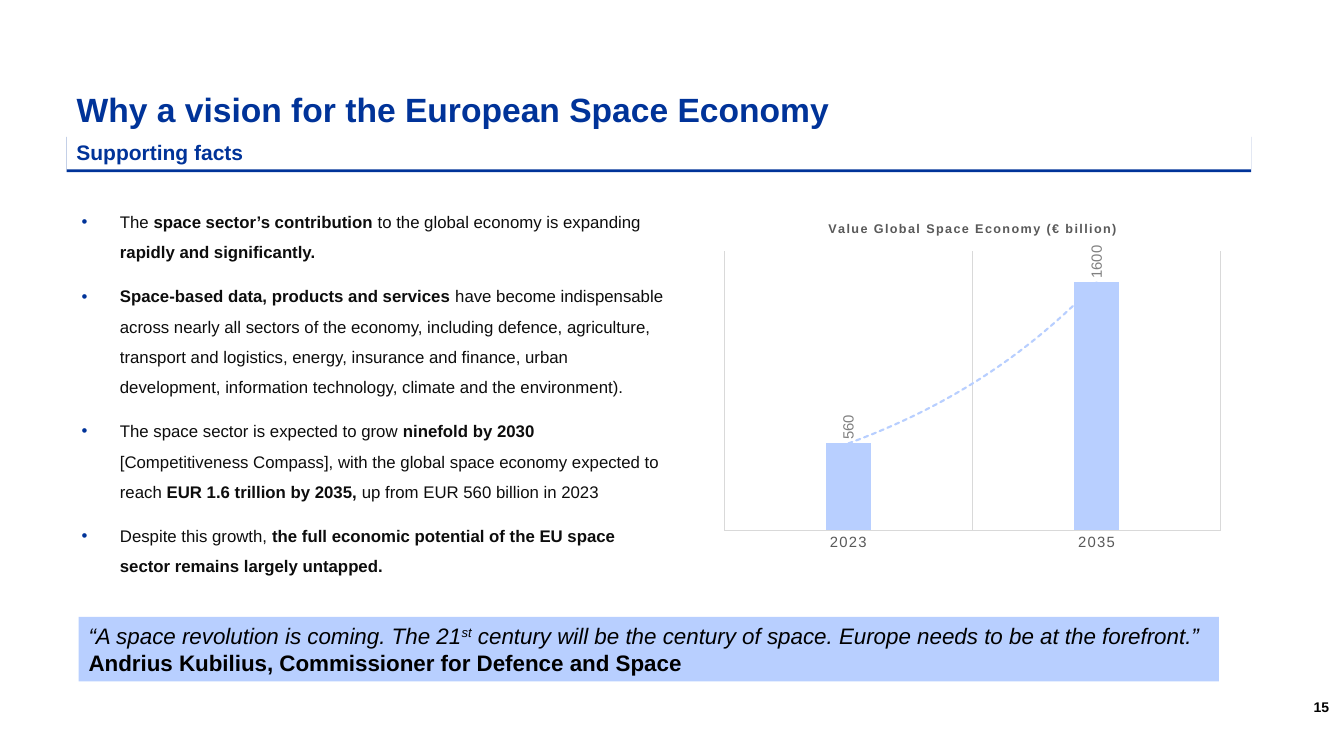
"""Build the slide on the vision for the European Space Economy."""
from lxml import etree
from pptx import Presentation
from pptx.chart.data import CategoryChartData
from pptx.dml.color import RGBColor
from pptx.enum.chart import XL_CHART_TYPE, XL_LABEL_POSITION, XL_TICK_MARK
from pptx.enum.shapes import MSO_SHAPE
from pptx.enum.text import MSO_ANCHOR, PP_ALIGN
from pptx.oxml import parse_xml
from pptx.oxml.ns import nsdecls, qn
from pptx.util import Inches, Pt

COLUMNS = XL_CHART_TYPE.COLUMN_CLUSTERED
OUTSIDE_END = XL_LABEL_POSITION.OUTSIDE_END
NO_TICKS = XL_TICK_MARK.NONE
RECTANGLE = MSO_SHAPE.RECTANGLE
TOP, MIDDLE, BOTTOM = MSO_ANCHOR.TOP, MSO_ANCHOR.MIDDLE, MSO_ANCHOR.BOTTOM
LEFT, JUSTIFY = PP_ALIGN.LEFT, PP_ALIGN.JUSTIFY

FONT = "Arial"
COLORS = {"navy": "003399", "pale": "B8CFFF", "body": "0D0D0D", "black": "000000",
          "white": "FFFFFF", "axis": "595959", "grid": "D9D9D9", "label": "808080"}

TITLE = "Why a vision for the European Space Economy"
HEADING = "Supporting facts"
PAGE_NUMBER = "15"
FACTS = [
    [("The ", ""), ("space sector’s contribution ", "b"),
     ("to the global economy is expanding ", ""), ("rapidly and significantly.", "b")],
    [("Space-based data, products and services ", "b"),
     ("have become indispensable across nearly all sectors of the economy, including "
      "defence, agriculture, transport and logistics, energy, insurance and finance, urban "
      "development, information technology, climate and the environment).", "")],
    [("The space sector is expected to grow ", ""), ("ninefold by 2030 ", "b"),
     ("[Competitiveness Compass], with the global space economy expected to reach ", ""),
     ("EUR 1.6 trillion by 2035, ", "b"), ("up from EUR 560 billion in 2023", "")],
    [("Despite this growth, ", ""),
     ("the full economic potential of the EU space sector remains largely untapped.", "b")],
]
QUOTE = [
    [("“A space revolution is coming. The 21", "i"), ("st", "i^"),
     (" century will be the century of space. Europe needs to be at the forefront.”", "i")],
    [("Andrius Kubilius, Commissioner for Defence and Space", "b")],
]
CHART_TITLE = "Value Global Space Economy (€ billion)"
SPACE_ECONOMY = {"2023": 560, "2035": 1600}
AXIS_MAX = 1800


def rgb(name):
    return RGBColor.from_string(COLORS[name])


def style_font(font, size, color, bold=False, italic=False):
    font.name, font.size, font.bold, font.italic = FONT, Pt(size), bold, italic
    font.color.rgb = rgb(color)


def add_runs(paragraph, runs, size, color):
    for text, style in runs:
        run = paragraph.add_run()
        run.text = text
        style_font(run.font, size, color, "b" in style, "i" in style)
        if "^" in style:
            run.font._element.set("baseline", "30000")


def fill_frame(frame, paragraphs, size, color, anchor=TOP, align=LEFT):
    frame.word_wrap = True
    frame.vertical_anchor = anchor
    for number, runs in enumerate(paragraphs):
        paragraph = frame.add_paragraph() if number else frame.paragraphs[0]
        paragraph.alignment = align
        add_runs(paragraph, runs, size, color)


def add_band(slide, box, fill):
    band = slide.shapes.add_shape(RECTANGLE, *map(Inches, box))
    band.shadow.inherit = False
    band.fill.solid()
    band.fill.fore_color.rgb = rgb(fill)
    band.line.fill.background()
    return band


def add_heading(slide):
    band = add_band(slide, (0.66, 1.33, 11.75, 0.35), "white")
    fill_frame(band.text_frame, [[(HEADING, "b")]], 15, "navy", align=JUSTIFY)
    effects = band._element.spPr.find(qn("a:effectLst"))
    effects.append(parse_xml(
        f'<a:outerShdw {nsdecls("a")} blurRad="0" dist="{Pt(2)}" dir="5400000" '
        f'algn="t" rotWithShape="0"><a:srgbClr val="{COLORS["navy"]}"/></a:outerShdw>'))


def add_facts(slide):
    frame = slide.shapes.add_textbox(*map(Inches, (0.65, 1.84, 6.13, 4))).text_frame
    frame.margin_left = frame.margin_right = Inches(0.16)
    frame.margin_top = frame.margin_bottom = Inches(0.16)
    fill_frame(frame, FACTS, 12, "body")
    for number, paragraph in enumerate(frame.paragraphs):
        paragraph.line_spacing = 1.5
        paragraph.space_before = Pt(10 if number else 0)
        properties = paragraph._p.get_or_add_pPr()
        properties.set("marL", str(Inches(0.38)))
        properties.set("indent", str(-Inches(0.38)))
        bullet_color = etree.SubElement(properties, qn("a:buClr"))
        etree.SubElement(bullet_color, qn("a:srgbClr"), val=COLORS["navy"])
        etree.SubElement(properties, qn("a:buFont"), typeface=FONT)
        etree.SubElement(properties, qn("a:buChar"), char="•")


def add_growth_trend(series):
    trend = parse_xml(
        f'<c:trendline {nsdecls("c", "a")}><c:spPr><a:ln w="{Pt(1.5)}" cap="rnd">'
        f'<a:solidFill><a:srgbClr val="{COLORS["pale"]}"/></a:solidFill>'
        '<a:prstDash val="sysDash"/></a:ln></c:spPr><c:trendlineType val="exp"/>'
        '<c:dispRSqr val="0"/><c:dispEq val="0"/></c:trendline>')
    series._element.find(qn("c:cat")).addprevious(trend)


def add_economy_chart(slide):
    data = CategoryChartData()
    data.categories = list(SPACE_ECONOMY)
    data.add_series("Series 1", list(SPACE_ECONOMY.values()))
    box = map(Inches, (7.08, 2.04, 5.13, 3.5))
    chart = slide.shapes.add_chart(COLUMNS, *box, data).chart
    style_font(chart.font, 10, "black")
    chart.has_legend = False

    chart.has_title = True
    heading = chart.chart_title.text_frame.paragraphs[0]
    add_runs(heading, [(CHART_TITLE, "b")], 9, "axis")
    heading.runs[0].font._element.set("spc", "100")
    chart.chart_title.include_in_layout = False

    years = chart.category_axis
    years.major_tick_mark = years.minor_tick_mark = NO_TICKS
    years.has_major_gridlines = True
    for line in (years.format.line, years.major_gridlines.format.line):
        line.color.rgb = rgb("grid")
        line.width = Pt(0.75)
    style_font(years.tick_labels.font, 10.6, "axis")
    years._element.find(".//" + qn("a:defRPr")).set("spc", "100")

    values = chart.value_axis
    values.minimum_scale, values.maximum_scale = 0, AXIS_MAX
    values.has_major_gridlines = False
    values.visible = False

    plot = chart.plots[0]
    plot.gap_width, plot.overlap = 444, -90
    plot.vary_by_categories = False
    series = plot.series[0]
    series.format.fill.solid()
    series.format.fill.fore_color.rgb = rgb("pale")
    labels = series.data_labels
    labels.show_value = True
    labels.position = OUTSIDE_END
    style_font(labels.font, 10.6, "label")
    labels._element.find(".//" + qn("a:bodyPr")).set("rot", "-5400000")
    add_growth_trend(series)

    plot_area = plot._element.getparent()
    for layout in plot_area.findall(qn("c:layout")):
        plot_area.remove(layout)
    sizes = "".join(f'<c:{key} val="{share}"/>' for key, share in
                    (("x", 0.02), ("y", 0.13), ("w", 0.96), ("h", 0.79)))
    plot_area.insert(0, parse_xml(
        f'<c:layout {nsdecls("c")}><c:manualLayout><c:layoutTarget val="inner"/>'
        f'<c:xMode val="edge"/><c:yMode val="edge"/>{sizes}</c:manualLayout></c:layout>'))


def main():
    deck = Presentation()
    deck.slide_width, deck.slide_height = Inches(13.33), Inches(7.5)
    slide = deck.slides.add_slide(deck.slide_layouts[5])

    title = slide.shapes.title
    title.left, title.top, title.width, title.height = map(Inches, (0.66, 0.66, 11.75, 0.89))
    fill_frame(title.text_frame, [[(TITLE, "b")]], 24, "navy", MIDDLE)
    title.text_frame.paragraphs[0].line_spacing = 0.9

    add_heading(slide)
    add_facts(slide)
    quote = add_band(slide, (0.78, 6.12, 11.31, 0.64), "pale")
    fill_frame(quote.text_frame, QUOTE, 16, "black")
    add_economy_chart(slide)
    page = slide.shapes.add_textbox(*map(Inches, (12.93, 6.75, 0.41, 0.4)))
    fill_frame(page.text_frame, [[(PAGE_NUMBER, "b")]], 10, "black", BOTTOM)
    deck.save("out.pptx")


if __name__ == "__main__":
    main()
